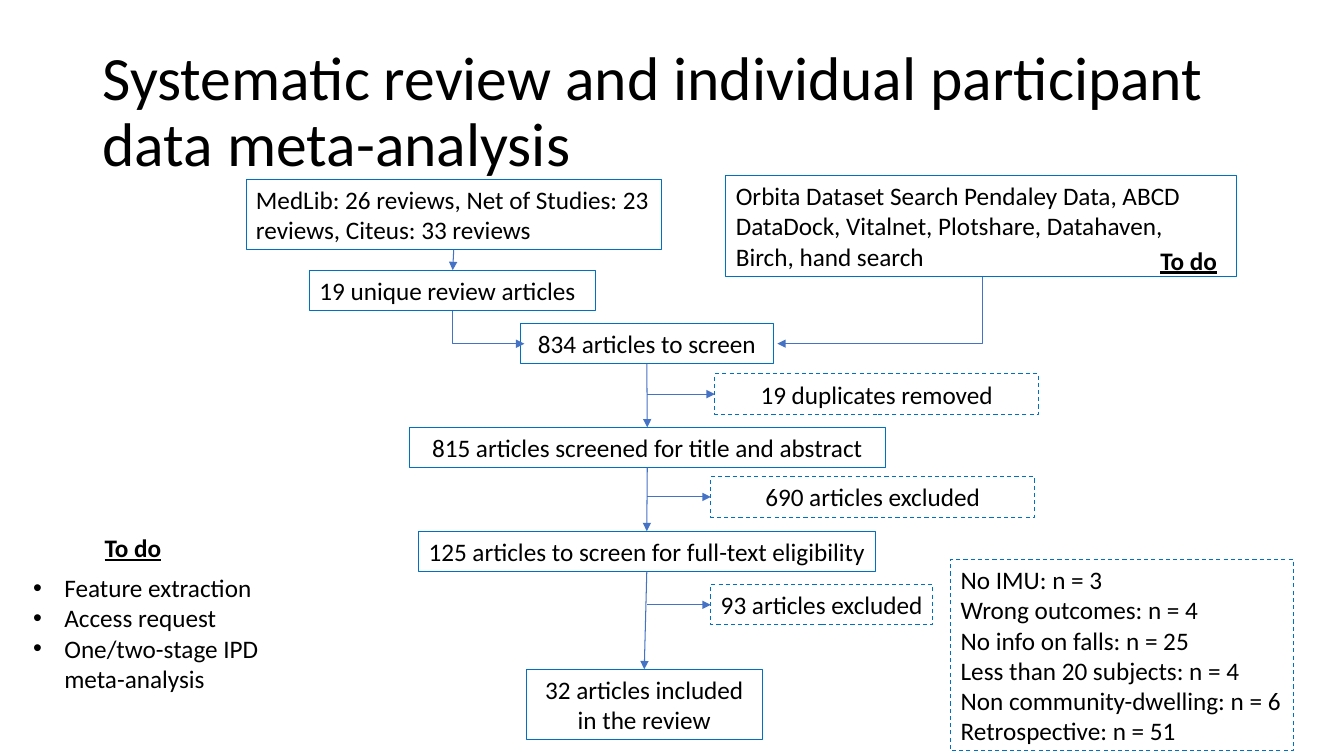
from lxml.etree import SubElement
from pptx import Presentation
from pptx.dml.color import RGBColor
from pptx.enum.dml import MSO_LINE
from pptx.enum.shapes import MSO_CONNECTOR, MSO_SHAPE
from pptx.enum.text import MSO_ANCHOR, PP_ALIGN
from pptx.oxml.ns import qn
from pptx.util import Inches, Pt

# Content
TITLE = "Systematic review and individual participant data meta-analysis"

# name: (left, top, width, text lines, centred, dashed, paragraphs)
BOXES = {
    "found": (2.44, 1.78, 4.12, 2, False, False, [
        "MedLib: 26 reviews, Net of Studies: 23 reviews, Citeus: 33 reviews"]),
    "data": (7.2, 1.74, 5.06, 3, False, False, [
        "Orbita Dataset Search Pendaley Data, ABCD DataDock, Vitalnet, "
        "Plotshare, Datahaven, Birch, hand search"]),
    "unique": (3.07, 2.68, 2.84, 1, False, False, ["19 unique review articles"]),
    "screen": (5.16, 3.21, 2.51, 1, True, False, ["834 articles to screen"]),
    "twins": (7.09, 3.71, 3.21, 1, True, True, ["19 duplicates removed"]),
    "titles": (4.06, 4.24, 4.72, 1, True, False,
               ["815 articles screened for title and abstract"]),
    "out": (7.05, 4.73, 3.21, 1, True, True, ["690 articles excluded"]),
    "full": (4.15, 5.27, 4.53, 1, True, False,
             ["125 articles to screen for full-text eligibility"]),
    "late": (7.05, 5.8, 2.2, 1, True, True, ["93 articles excluded"]),
    "kept": (5.22, 6.64, 2.34, 2, True, False,
             ["32 articles included in the review"]),
    "why": (9.43, 5.55, 3.4, 6, False, True, [
        "No IMU: n = 3", "Wrong outcomes: n = 4", "No info on falls: n = 25",
        "Less than 20 subjects: n = 4", "Non community-dwelling: n = 6",
        "Retrospective: n = 51"]),
}
STEPS = [("found", "unique"), ("screen", "titles"), ("titles", "full"), ("full", "kept")]
SIDES = ["twins", "out", "late"]
BENDS = [((4.49, 3.09), (5.2, 3.41)), ((9.74, 2.75), (7.71, 3.41))]
LABELS = [(11.41, 2.38), (0.94, 5.23)]
TASKS = ["Feature extraction", "Access request", "One/two-stage IPD meta-analysis"]

THEME = {
    "font": "Calibri", "title": 44, "body": 18,
    "ink": RGBColor.from_string("000000"),
    "edge": RGBColor.from_string("0070C0"),
    "arrow": RGBColor.from_string("4472C4"),
    "paper": RGBColor.from_string("FFFFFF"),
}
TRUNK = 6.42

deck = Presentation()
deck.slide_width, deck.slide_height = Inches(13.33), Inches(7.5)
slide = deck.slides.add_slide(deck.slide_layouts[6])


def write(shape, lines, size="body", bold=False, align=PP_ALIGN.LEFT):
    frame = shape.text_frame
    frame.word_wrap = True
    frame.vertical_anchor = MSO_ANCHOR.TOP
    for i, line in enumerate(lines):
        para = frame.paragraphs[0] if i == 0 else frame.add_paragraph()
        para.alignment = align
        run = para.add_run()
        run.text = line
        font = run.font
        font.name, font.size = THEME["font"], Pt(THEME[size])
        font.color.rgb = THEME["ink"]
        if bold:
            font.bold = font.underline = True
    return frame


def label(left, top, width, height, lines, **style):
    area = [Inches(n) for n in (left, top, width, height)]
    return write(slide.shapes.add_textbox(*area), lines, **style)


def box(left, top, width, rows, mid, dash, lines):
    area = [Inches(n) for n in (left, top, width, 0.1 + 0.3 * rows)]
    shape = slide.shapes.add_shape(MSO_SHAPE.RECTANGLE, *area)
    shape.shadow.inherit = False
    shape.fill.background()
    shape.line.color.rgb = THEME["edge"]
    shape.line.width = Pt(0)
    if dash:
        shape.line.dash_style = MSO_LINE.DASH
    frame = write(shape, lines, align=PP_ALIGN.CENTER if mid else PP_ALIGN.LEFT)
    if mid:
        frame.margin_left = frame.margin_right = Inches(0.09)
    return shape


def arrow(kind, start, end):
    ends = [Inches(n) for n in (*start, *end)]
    line = slide.shapes.add_connector(kind, *ends)
    line.line.color.rgb = THEME["arrow"]
    line.line.width = Pt(0.75)
    SubElement(line.line._get_or_add_ln(), qn("a:tailEnd"), type="triangle")
    SubElement(line._element.spPr, qn("a:effectLst"))
    return line


def bend(start, end):
    """Arrow that runs down first, then sideways."""
    (x1, y1), (x2, y2) = start, end
    midx, midy = (x1 + x2) / 2, (y1 + y2) / 2
    wide, tall = y2 - y1, abs(x2 - x1)
    left, right = midx - wide / 2, midx + wide / 2
    top, low = midy - tall / 2, midy + tall / 2
    east = x2 > x1
    if east:
        left, right = right, left
    line = arrow(MSO_CONNECTOR.ELBOW, (left, top), (right, low))
    props = line._element.spPr
    props.find(qn("a:prstGeom")).set("prst", "bentConnector2")
    props.find(qn("a:xfrm")).set("rot", str((270 if east else 90) * 60000))


# Background and title
slide.background.fill.solid()
slide.background.fill.fore_color.rgb = THEME["paper"]
head = label(0.92, 0.4, 11.5, 1.45, [TITLE], size="title")
head.vertical_anchor = MSO_ANCHOR.MIDDLE
head.paragraphs[0].line_spacing = 0.9

# Flow boxes
nodes = {name: box(*data) for name, data in BOXES.items()}

# Arrows down the flow, out to the side, and round the corners
for first, then in STEPS:
    step = arrow(MSO_CONNECTOR.STRAIGHT, (TRUNK, 0), (TRUNK, 1))
    step.begin_connect(nodes[first], 2)
    step.end_connect(nodes[then], 0)
for name in SIDES:
    left, top = BOXES[name][:2]
    side = arrow(MSO_CONNECTOR.STRAIGHT, (TRUNK, top + 0.2), (left, top + 0.2))
    side.end_connect(nodes[name], 1)
for start, end in BENDS:
    bend(start, end)

# Open tasks
for left, top in LABELS:
    label(left, top, 0.83, 0.4, ["To do"], bold=True)
for para in label(0.23, 5.63, 2.88, 1.3, TASKS).paragraphs:
    props = para._p.get_or_add_pPr()
    props.set("marL", str(Inches(0.31)))
    props.set("indent", str(-Inches(0.31)))
    SubElement(props, qn("a:buFont"), typeface="Arial")
    SubElement(props, qn("a:buChar"), char="•")

deck.save("out.pptx")
